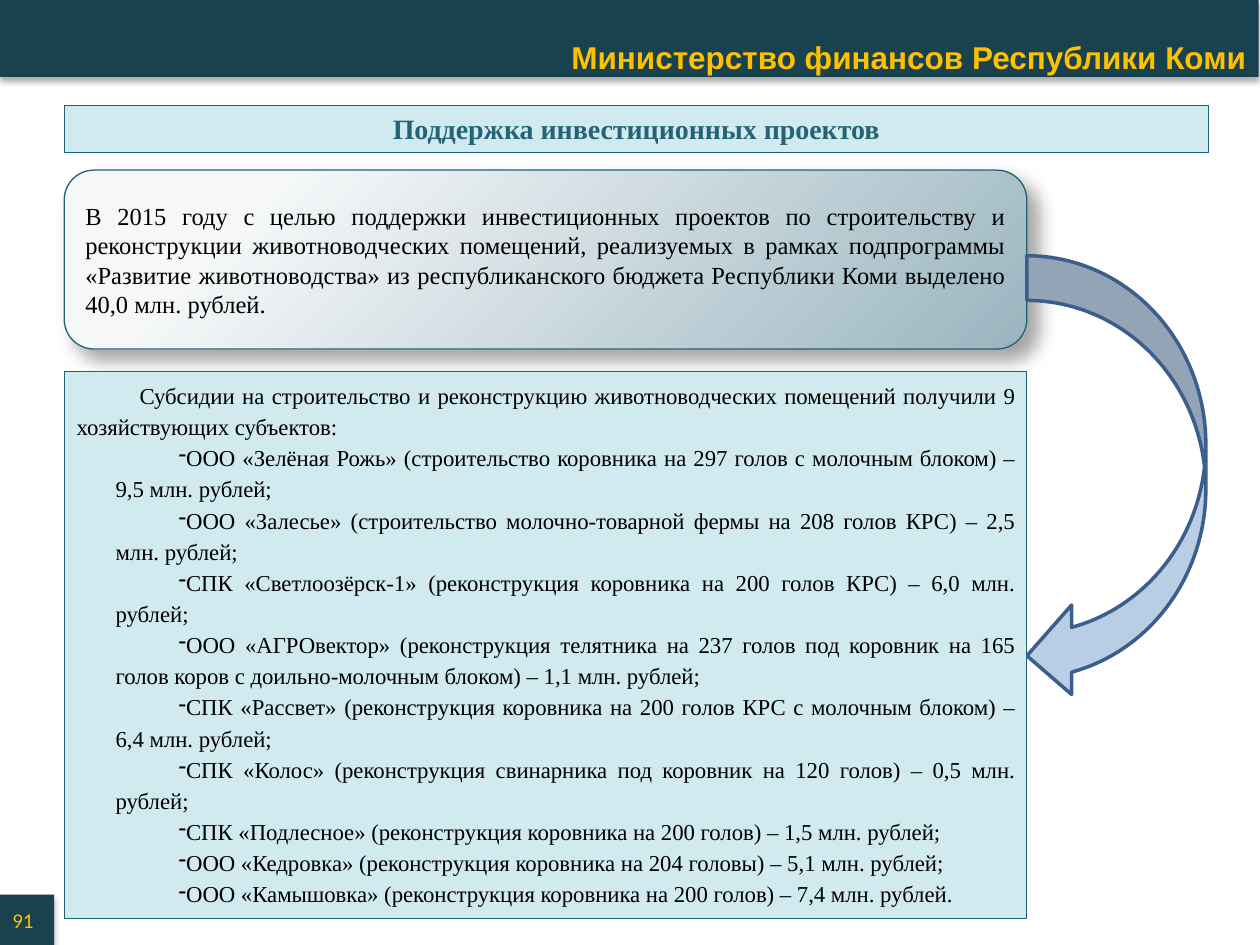
from lxml.etree import SubElement
from pptx import Presentation
from pptx.dml.color import RGBColor
from pptx.enum.shapes import MSO_SHAPE
from pptx.enum.text import MSO_ANCHOR, MSO_AUTO_SIZE, PP_ALIGN
from pptx.oxml import parse_xml
from pptx.oxml.ns import nsdecls, qn
from pptx.util import Inches, Pt

COLORS = {
    "header": "18424E",
    "gold": "FFC000",
    "pale": "D1EAF0",
    "border": "206375",
    "heading": "256474",
    "black": "000000",
    "arrow": "B9CDE5",
    "arrow_line": "3A5F8C",
    "gradient_start": "F5F7F8",
    "gradient_end": "9AB5C0",
}
SERIF = "Times New Roman"
LEFT = 0.51
PANEL_WIDTH = 7.64
HEADING = "Поддержка инвестиционных проектов"
SUMMARY = (
    "В 2015 году с целью поддержки инвестиционных проектов по строительству и "
    "реконструкции животноводческих помещений, реализуемых в рамках подпрограммы "
    "«Развитие животноводства» из республиканского бюджета Республики Коми "
    "выделено 40,0 млн. рублей."
)
INTRODUCTION = (
    "Субсидии на строительство и реконструкцию животноводческих помещений "
    "получили 9 хозяйствующих субъектов:"
)
RECIPIENTS = [
    "ООО «Зелёная Рожь» (строительство коровника на 297 голов с молочным блоком) – 9,5 млн. рублей;",
    "ООО «Залесье» (строительство молочно-товарной фермы на 208 голов КРС) – 2,5 млн. рублей;",
    "СПК «Светлоозёрск-1» (реконструкция коровника на 200 голов КРС) – 6,0 млн. рублей;",
    "ООО «АГРОвектор» (реконструкция телятника на 237 голов под коровник на 165 голов коров "
    "с доильно-молочным блоком) – 1,1 млн. рублей;",
    "СПК «Рассвет» (реконструкция коровника на 200 голов КРС с молочным блоком) – 6,4 млн. рублей;",
    "СПК «Колос» (реконструкция свинарника под коровник на 120 голов) – 0,5 млн. рублей;",
    "СПК «Подлесное» (реконструкция коровника на 200 голов) – 1,5 млн. рублей;",
    "ООО «Кедровка» (реконструкция коровника на 204 головы) – 5,1 млн. рублей;",
    "ООО «Камышовка» (реконструкция коровника на 200 голов) – 7,4 млн. рублей.",
]


def color(name):
    """Return the named colour."""
    return RGBColor.from_string(COLORS[name])


def add_box(slide, kind, bounds, fill, line=None, line_width=0.75):
    """Add a preset shape with a plain fill and an optional outline."""
    shape = slide.shapes.add_shape(kind, *(Inches(value) for value in bounds))
    shape.shadow.inherit = False
    shape.fill.solid()
    shape.fill.fore_color.rgb = color(fill)
    if line:
        shape.line.color.rgb = color(line)
        shape.line.width = Pt(line_width)
    else:
        shape.line.fill.background()
    shape.text_frame.word_wrap = True
    return shape


def add_shadow(shape, blur, distance, angle, opacity):
    """Give a shape an outer shadow."""
    effects = shape.element.spPr.find(qn("a:effectLst"))
    shadow = SubElement(
        effects, qn("a:outerShdw"), blurRad=str(Pt(blur)), dist=str(Pt(distance)),
        dir=str(angle * 60000), algn="tl", rotWithShape="0",
    )
    shade = SubElement(shadow, qn("a:srgbClr"), val=COLORS["black"])
    SubElement(shade, qn("a:alpha"), val=str(opacity * 1000))


def set_corner_gradient(shape):
    """Fill a shape with a gradient that spreads from its top left corner."""
    properties = shape.element.spPr
    gradient = parse_xml(
        f'<a:gradFill {nsdecls("a")} rotWithShape="1"><a:gsLst>'
        f'<a:gs pos="20000"><a:srgbClr val="{COLORS["gradient_start"]}"/></a:gs>'
        f'<a:gs pos="100000"><a:srgbClr val="{COLORS["gradient_end"]}"/></a:gs>'
        '</a:gsLst><a:path path="circle">'
        '<a:fillToRect l="-15000" t="-15000" r="115000" b="115000"/>'
        '</a:path></a:gradFill>'
    )
    properties.replace(properties.find(qn("a:solidFill")), gradient)


def write_paragraph(paragraph, text, size, alignment, ink="black", font=SERIF, bold=False):
    """Write one run of text in a paragraph."""
    paragraph.alignment = alignment
    run = paragraph.add_run()
    run.text = text
    run.font.size = Pt(size)
    run.font.name = font
    run.font.bold = bold
    run.font.color.rgb = color(ink)


def set_indent(paragraph, left, bullet=None):
    """Set the left margin, the first line indent and an optional bullet."""
    properties = paragraph._p.get_or_add_pPr()
    properties.set("marL", str(Inches(left)))
    properties.set("indent", str(Inches(0.5)))
    if bullet:
        SubElement(properties, qn("a:buFontTx"))
        SubElement(properties, qn("a:buChar"), char=bullet)
    paragraph.line_spacing = 1.14


def add_header(slide):
    """Add the ministry band and the page number."""
    band = add_box(slide, MSO_SHAPE.RECTANGLE, (0, -0.01, 9.99, 0.62), "header")
    band.text_frame.vertical_anchor = MSO_ANCHOR.BOTTOM
    band.text_frame.margin_bottom = Inches(0.01)
    write_paragraph(band.text_frame.paragraphs[0], "Министерство финансов Республики Коми",
                    18, PP_ALIGN.RIGHT, "gold", "Arial", True)
    number = add_box(slide, MSO_SHAPE.RECTANGLE, (0, 7.1, 0.43, 0.4), "header")
    write_paragraph(number.text_frame.paragraphs[0], "91", 12, PP_ALIGN.LEFT, "gold", "Calibri")
    for shape in (band, number):
        add_shadow(shape, 3.5, 2.2, 90, 32)


def add_summary(slide):
    """Add the rounded panel with the total support."""
    panel = add_box(slide, MSO_SHAPE.ROUNDED_RECTANGLE, (LEFT, 1.35, PANEL_WIDTH, 1.42),
                    "gradient_start", "border")
    set_corner_gradient(panel)
    add_shadow(panel, 10.2, 8, 45, 35)
    write_paragraph(panel.text_frame.paragraphs[0], SUMMARY, 14, PP_ALIGN.JUSTIFY)


def add_pale_box(slide, top, width, height):
    """Add a pale rectangle that fits its text and return its text frame."""
    shape = add_box(slide, MSO_SHAPE.RECTANGLE, (LEFT, top, width, height), "pale", "border")
    shape.text_frame.vertical_anchor = MSO_ANCHOR.TOP
    shape.text_frame.auto_size = MSO_AUTO_SIZE.SHAPE_TO_FIT_TEXT
    return shape.text_frame


def add_recipients(slide):
    """Add the list of subsidy recipients."""
    frame = add_pale_box(slide, 2.95, PANEL_WIDTH, 4.34)
    introduction = frame.paragraphs[0]
    set_indent(introduction, 0)
    write_paragraph(introduction, INTRODUCTION, 13, PP_ALIGN.JUSTIFY)
    for recipient in RECIPIENTS:
        paragraph = frame.add_paragraph()
        set_indent(paragraph, 0.31, "-")
        write_paragraph(paragraph, recipient, 13, PP_ALIGN.JUSTIFY)


def main():
    """Build and save the slide."""
    presentation = Presentation()
    presentation.slide_width = Inches(10)
    presentation.slide_height = Inches(7.5)
    slide = presentation.slides.add_slide(presentation.slide_layouts[6])
    add_header(slide)
    add_summary(slide)
    add_box(slide, MSO_SHAPE.CURVED_LEFT_ARROW, (LEFT + PANEL_WIDTH, 2.03, 1.42, 3.53),
            "arrow", "arrow_line", 2)
    heading = add_pale_box(slide, 0.84, 9.08, 0.37)
    write_paragraph(heading.paragraphs[0], HEADING, 16, PP_ALIGN.CENTER, "heading", bold=True)
    add_recipients(slide)
    presentation.save("out.pptx")


if __name__ == "__main__":
    main()
